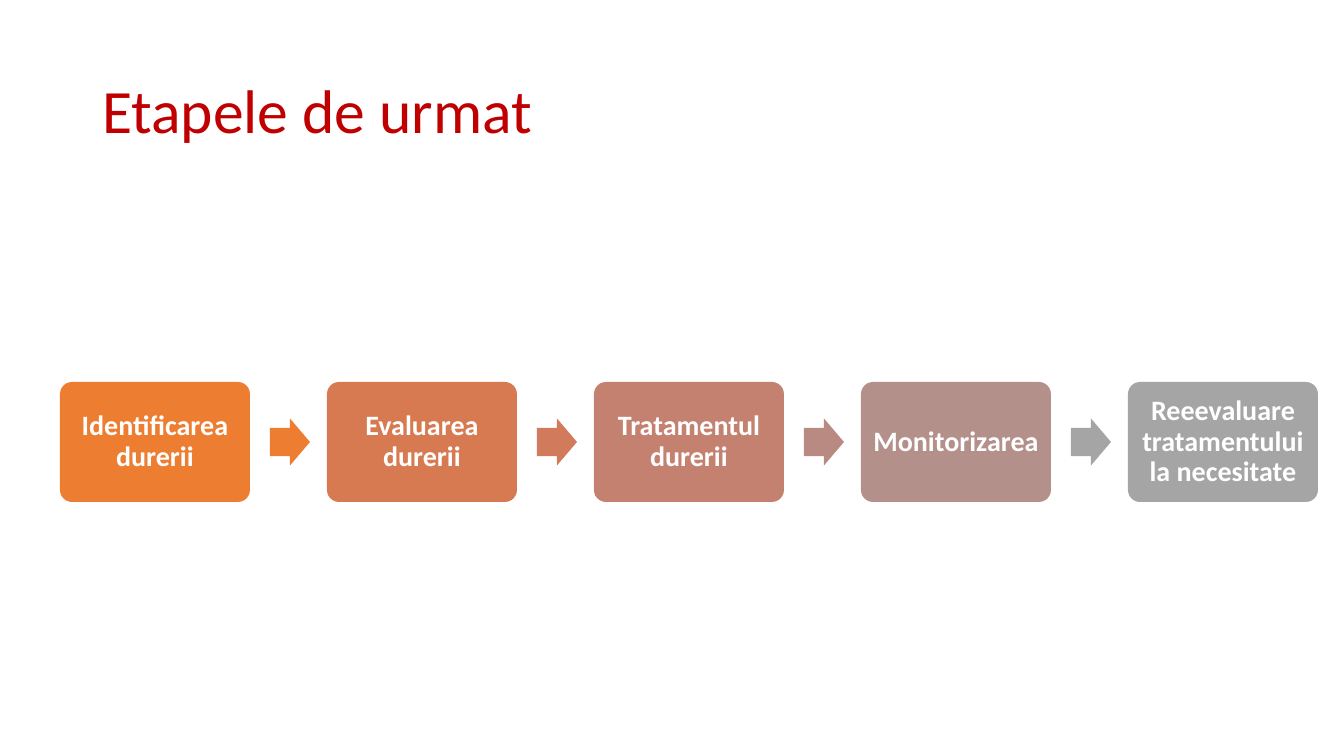
"""Build a slide showing the five steps of pain management as a process."""
from pptx import Presentation
from pptx.dml.color import RGBColor
from pptx.enum.shapes import MSO_SHAPE
from pptx.enum.text import MSO_ANCHOR, PP_ALIGN
from pptx.util import Pt

TITLE = "Etapele de urmat"
STEPS = [
    ("Identificarea durerii", "step1"),
    ("Evaluarea durerii", "step2"),
    ("Tratamentul durerii", "step3"),
    ("Monitorizarea", "step4"),
    ("Reeevaluare tratamentului la necesitate", "step5"),
]
ARROWS = ["arrow1", "arrow2", "arrow3", "arrow4"]
COLORS = {
    "title": "C00000", "text": "FFFFFF",
    "step1": "ED7D31", "step2": "D87A51", "step3": "C48170",
    "step4": "B4908B", "step5": "A5A5A5",
    "arrow1": "ED7D31", "arrow2": "D17B5C", "arrow3": "B98A82",
    "arrow4": "A5A5A5",
}
FONT = "Calibri"
ROUNDED, ARROW = MSO_SHAPE.ROUNDED_RECTANGLE, MSO_SHAPE.RIGHT_ARROW
LEFT, CENTER, MIDDLE = PP_ALIGN.LEFT, PP_ALIGN.CENTER, MSO_ANCHOR.MIDDLE

SLIDE_W, SLIDE_H = 1344, 756
SCALE = 12192000 / SLIDE_W
STEP_X, STEP_Y, STEP_W, STEP_H = 60, 382, 190, 120
PITCH, INSET = 267, 8
ARROW_W, ARROW_H, ARROW_GAP = 40, 47, 20


def px(n):
    return round(n * SCALE)


def write(sp, text, size, color, align, bold=False):
    tf = sp.text_frame
    tf.word_wrap = True
    tf.vertical_anchor = MIDDLE
    p = tf.paragraphs[0]
    p.alignment = align
    p.line_spacing = 0.9
    r = p.add_run()
    r.text = text
    r.font.name = FONT
    r.font.size = Pt(size)
    r.font.bold = bold
    r.font.color.rgb = RGBColor.from_string(COLORS[color])


def add_block(slide, kind, x, y, w, h, color, adjustments):
    sp = slide.shapes.add_shape(kind, px(x), px(y), px(w), px(h))
    sp.shadow.inherit = False
    sp.fill.solid()
    sp.fill.fore_color.rgb = RGBColor.from_string(COLORS[color])
    sp.line.fill.background()
    for i, value in enumerate(adjustments):
        sp.adjustments[i] = value
    return sp


def main():
    prs = Presentation()
    prs.slide_width, prs.slide_height = px(SLIDE_W), px(SLIDE_H)
    slide = prs.slides.add_slide(prs.slide_layouts[5])

    title = slide.shapes.title
    title.left, title.top, title.width, title.height = map(px, (92, 41, 1159, 146))
    write(title, TITLE, 44, "title", LEFT)

    for i, (text, color) in enumerate(STEPS):
        x = STEP_X + i * PITCH
        sp = add_block(slide, ROUNDED, x, STEP_Y, STEP_W, STEP_H, color, [0.1])
        tf = sp.text_frame
        tf.margin_left = tf.margin_right = px(INSET)
        tf.margin_top = tf.margin_bottom = px(INSET)
        write(sp, text, 20, "text", CENTER, bold=True)

    arrow_y = STEP_Y + (STEP_H - ARROW_H) / 2
    for i, color in enumerate(ARROWS):
        x = STEP_X + i * PITCH + STEP_W + ARROW_GAP
        add_block(slide, ARROW, x, arrow_y, ARROW_W, ARROW_H, color, [0.6, 0.5])

    prs.save("out.pptx")


if __name__ == "__main__":
    main()
